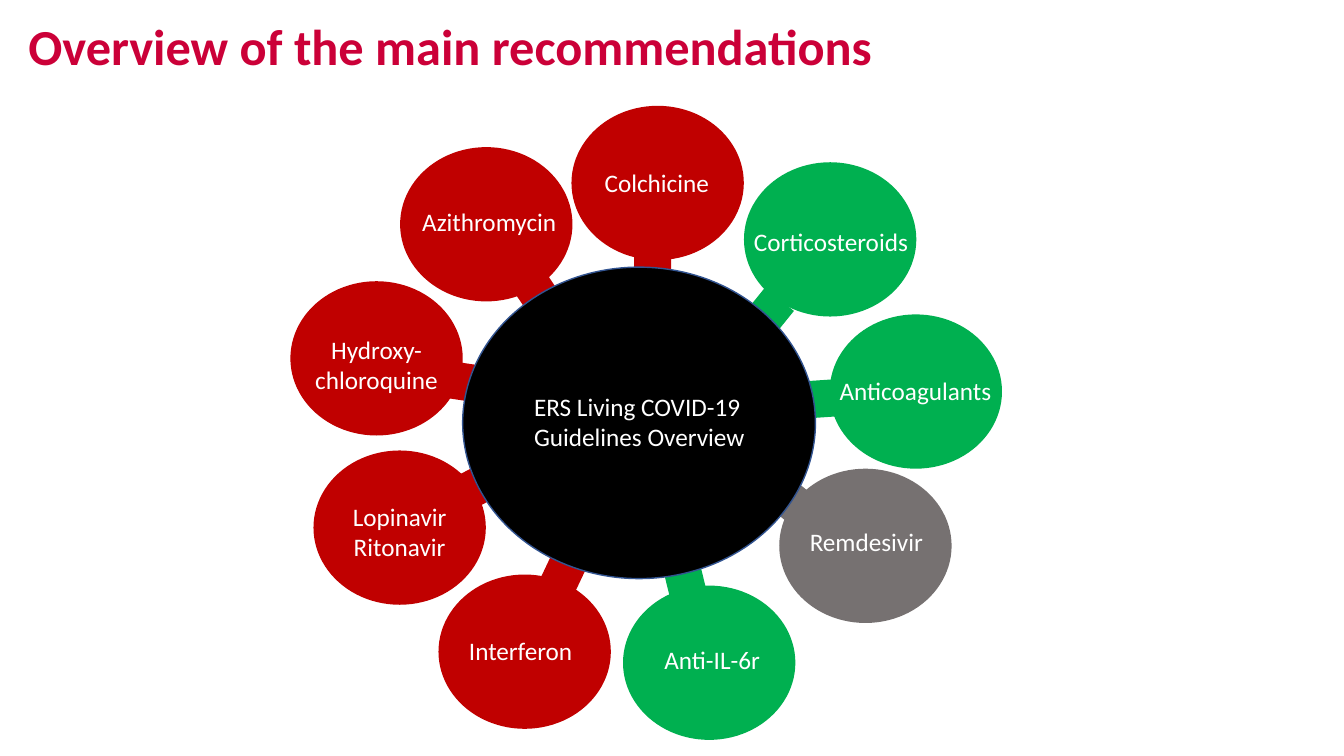
from pptx import Presentation
from pptx.dml.color import RGBColor
from pptx.enum.shapes import MSO_SHAPE
from pptx.enum.text import MSO_ANCHOR, MSO_AUTO_SIZE, PP_ALIGN
from pptx.util import Pt

RED, GREEN, GREY, WHITE = "C00000", "00B050", "767171", "FFFFFF"
LEFT, CENTER = PP_ALIGN.LEFT, PP_ALIGN.CENTER


def add_filled(kind, left, top, width, height, color):
    figure = slide.shapes.add_shape(kind, Pt(left), Pt(top), Pt(width), Pt(height))
    figure.shadow.inherit = False
    figure.fill.solid()
    figure.fill.fore_color.rgb = RGBColor.from_string(color)
    figure.line.fill.background()
    return figure


def add_label(text, left, top, width, height, align):
    label = slide.shapes.add_textbox(Pt(left), Pt(top), Pt(width), Pt(height))
    label.text_frame.word_wrap = True
    label.text_frame.text = text
    for paragraph in label.text_frame.paragraphs:
        paragraph.alignment = align
        paragraph.font.size = Pt(18)
        paragraph.font.name = "Calibri"
        paragraph.font.color.rgb = RGBColor.from_string(WHITE)


presentation = Presentation()
presentation.slide_width = Pt(960)
presentation.slide_height = Pt(540)
slide = presentation.slides.add_slide(presentation.slide_layouts[5])

title = slide.shapes.title
title.left, title.top, title.width, title.height = Pt(13), Pt(8), Pt(810), Pt(54.7)
title.text_frame.text = "Overview of the main recommendations"
title.text_frame.auto_size = MSO_AUTO_SIZE.NONE
title.text_frame.vertical_anchor = MSO_ANCHOR.MIDDLE
heading = title.text_frame.paragraphs[0]
heading.alignment = LEFT
heading.line_spacing = 0.9
heading.font.size = Pt(36)
heading.font.bold = True
heading.font.name = "Calibri"
heading.font.color.rgb = RGBColor.from_string("CB0038")

# name, color, circle position, spoke position, spoke rotation, label position, alignment
treatments = [
    ("Colchicine", RED, (408.2, 75.6), (452.9, 179.3), 0, (424.8, 115.9), LEFT),
    ("Corticosteroids", GREEN, (531.4, 115.9), (537.8, 211.7), 219, (531.4, 158.4), LEFT),
    ("Anticoagulants", GREEN, (592.6, 224.6), (573.8, 275.8), 266.1, (592.6, 264.2), LEFT),
    ("Remdesivir", GREY, (556.6, 334.8), (550.1, 347.8), 128.4, (546.5, 372.2), CENTER),
    ("Anti-IL-6r", GREEN, (445, 418.3), (475.9, 405.4), 346.2, (436.3, 456.5), CENTER),
    ("Interferon", RED, (313.2, 410.4), (388.8, 401), 205.4, (299.5, 450), CENTER),
    ("Lopinavir\nRitonavir", RED, (223.9, 321.8), (324.7, 339.8), 242.7, (213.1, 354.2), CENTER),
    ("Hydroxy-chloroquine", RED, (207.4, 200.9), (316.8, 263.5), 278.6, (196.6, 235.4), CENTER),
    ("Azithromycin", RED, (285.8, 105.1), (369.4, 198.7), 326.2, (294.5, 144), LEFT),
]

for name, color, circle_at, spoke_at, rotation, label_at, align in treatments:
    spoke = add_filled(MSO_SHAPE.RECTANGLE, *spoke_at, 26.6, 18, color)
    spoke.rotation = rotation

hub = add_filled(MSO_SHAPE.OVAL, 330.5, 190.8, 252, 222.5, "000000")
hub.line.color.rgb = RGBColor.from_string("325491")
hub.line.width = Pt(1)

for name, color, circle_at, spoke_at, rotation, label_at, align in treatments:
    add_filled(MSO_SHAPE.OVAL, *circle_at, 123.1, 110.2, color)

for name, color, circle_at, spoke_at, rotation, label_at, align in treatments:
    label_height = 51 if "\n" in name or name.startswith("Hydroxy") else 29
    add_label(name, *label_at, 144.7, label_height, align)

add_label("ERS Living COVID-19 Guidelines Overview", 374.4, 275.8, 174.2, 51, LEFT)

presentation.save("out.pptx")
